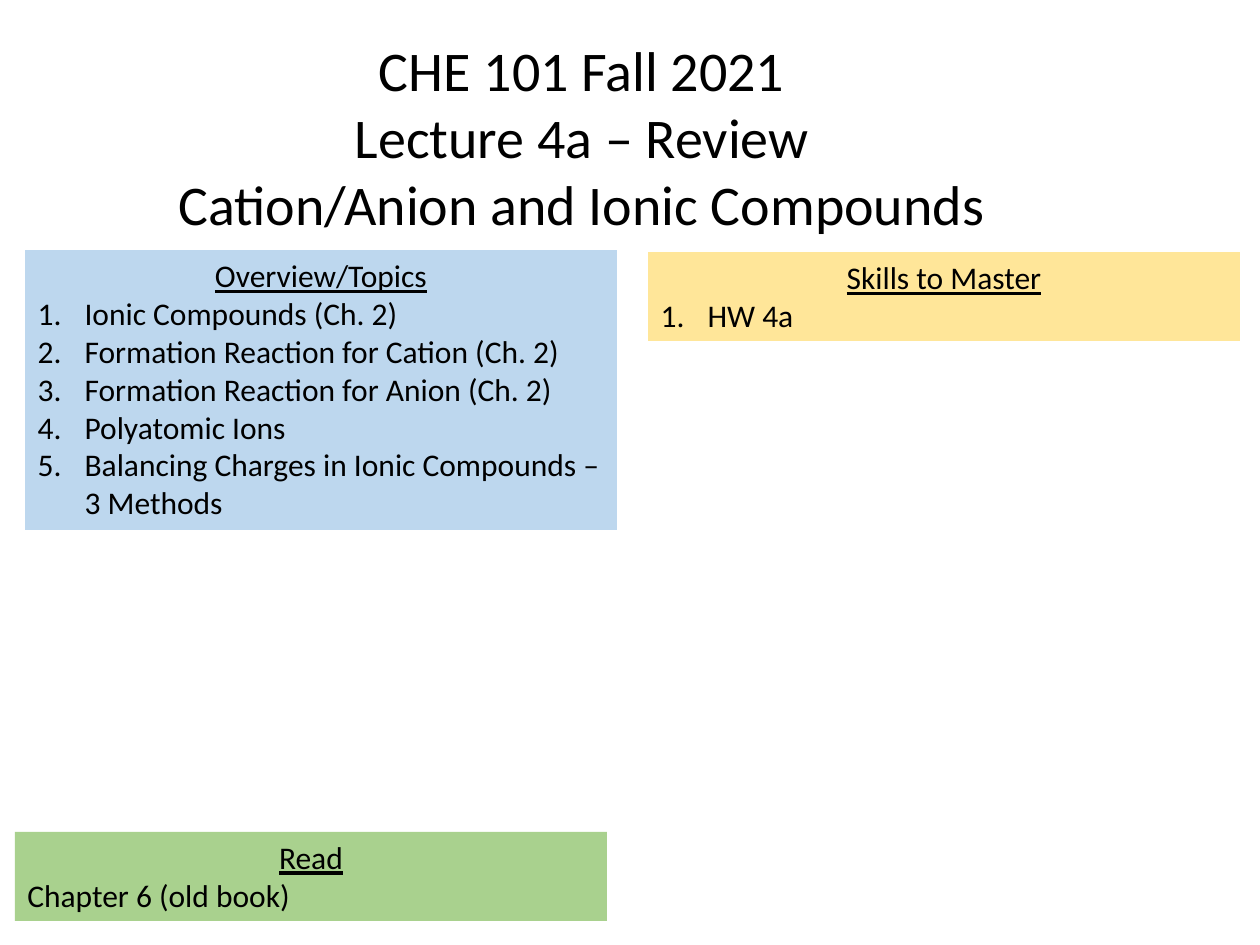
from lxml import etree
from pptx import Presentation
from pptx.dml.color import RGBColor
from pptx.enum.text import MSO_ANCHOR, MSO_AUTO_SIZE, PP_ALIGN
from pptx.oxml.ns import qn
from pptx.util import Pt

PX = 914400 // 126
BLACK = RGBColor(0x00, 0x00, 0x00)
BLUE = RGBColor(0xBD, 0xD7, 0xEE)
YELLOW = RGBColor(0xFF, 0xE6, 0x99)
GREEN = RGBColor(0xA9, 0xD1, 0x8E)
LEFT, CENTER = PP_ALIGN.LEFT, PP_ALIGN.CENTER
TOP = MSO_ANCHOR.TOP
NO_FIT = MSO_AUTO_SIZE.NONE
INDENT = 47
PANEL_WIDTH = 592


def place(box, left, top, width, height, wrap=True):
    box.left, box.top, box.width, box.height = (
        value * PX for value in (left, top, width, height))
    frame = box.text_frame
    frame.word_wrap = wrap
    frame.auto_size = NO_FIT
    frame.vertical_anchor = TOP


def write(box, text, size=18, align=LEFT, underline=False, numbered=False):
    """Add one paragraph, filling the empty first one before adding more."""
    frame = box.text_frame
    para = frame.paragraphs[0] if not frame.text else frame.add_paragraph()
    para.alignment = align
    para.space_before = Pt(0)
    span = para.add_run()
    span.text = text
    span.font.name = "Calibri"
    span.font.size = Pt(size)
    span.font.color.rgb = BLACK
    span.font.underline = underline
    properties = para._p.get_or_add_pPr()
    indent = INDENT * PX if numbered else 0
    properties.set("marL", str(indent))
    properties.set("indent", str(-indent))
    if numbered:
        etree.SubElement(properties, qn("a:buFont"), typeface="+mj-lt")
        etree.SubElement(properties, qn("a:buAutoNum"), type="arabicPeriod")
    else:
        etree.SubElement(properties, qn("a:buNone"))


deck = Presentation()
deck.slide_width = 1260 * PX
deck.slide_height = 945 * PX
page = deck.slides.add_slide(deck.slide_layouts.get_by_name("Two Content"))
title, topics_box, skills_box = list(page.placeholders)[:3]
read_box = page.shapes.add_textbox(0, 0, PX, PX)

panels = [
    (topics_box, 25, 250, 280, BLUE, "Overview/Topics", True, [
        "Ionic Compounds (Ch. 2)",
        "Formation Reaction for Cation (Ch. 2)",
        "Formation Reaction for Anion (Ch. 2)",
        "Polyatomic Ions",
        "Balancing Charges in Ionic Compounds – 3 Methods",
    ]),
    (skills_box, 648, 252, 89, YELLOW, "Skills to Master", True, ["HW 4a"]),
    (read_box, 15, 832, 89, GREEN, "Read", False, ["Chapter 6 (old book)"]),
]
for box, left, top, height, color, heading, numbered, items in panels:
    place(box, left, top, PANEL_WIDTH, height)
    box.fill.solid()
    box.fill.fore_color.rgb = color
    write(box, heading, align=CENTER, underline=True)
    for item in items:
        write(box, item, numbered=numbered)

place(title, 161, 29, 842, 217, wrap=False)
for line in ("CHE 101 Fall 2021", "Lecture 4a – Review",
             "Cation/Anion and Ionic Compounds"):
    write(title, line, size=32, align=CENTER)

deck.save("out.pptx")
